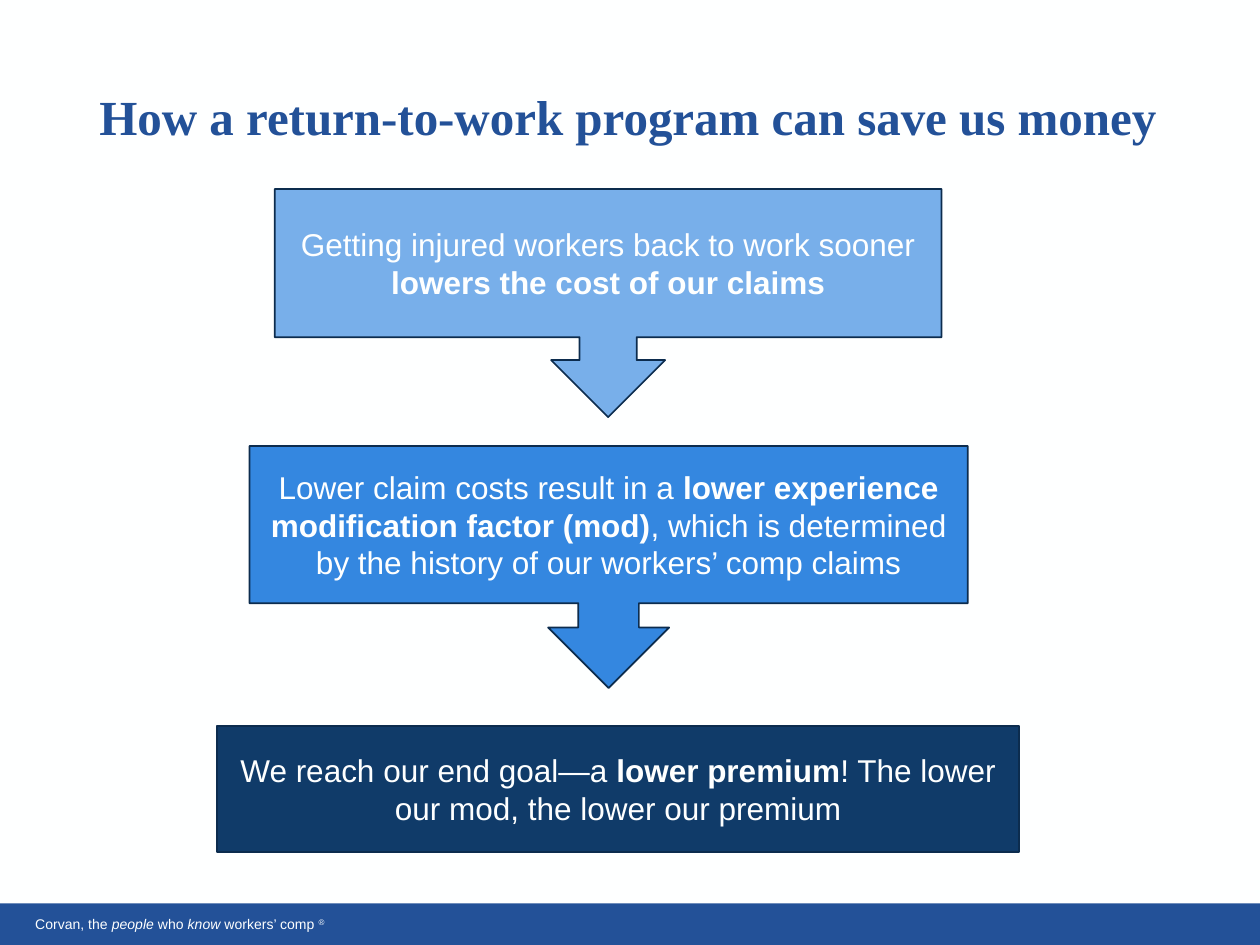
from pptx import Presentation
from pptx.dml.color import RGBColor
from pptx.enum.shapes import MSO_SHAPE
from pptx.enum.text import MSO_ANCHOR, PP_ALIGN
from pptx.util import Cm, Pt

RECTANGLE = MSO_SHAPE.RECTANGLE
ARROW_CALLOUT = MSO_SHAPE.DOWN_ARROW_CALLOUT
TOP, MIDDLE = MSO_ANCHOR.TOP, MSO_ANCHOR.MIDDLE
LEFT, CENTER = PP_ALIGN.LEFT, PP_ALIGN.CENTER

COLORS = {
    "paper": "FEFFFF",
    "brand": "235198",
    "outline": "0C2C4E",
    "light": "78AFEA",
    "medium": "3487E0",
    "dark": "103B69",
}

PAGE_WIDTH, PAGE_HEIGHT = 25.4, 19.05

# Each step: box (left, top, width, height), shape, colour, (text, style) spans
STEPS = [
    ((5.54, 3.81, 13.44, 4.6), ARROW_CALLOUT, "light", [
        ("Getting injured workers back to work sooner ", ""),
        ("lowers the cost of our claims", "bold"),
    ]),
    ((5.03, 8.99, 14.48, 4.88), ARROW_CALLOUT, "medium", [
        ("Lower claim costs result in a ", ""),
        ("lower experience modification factor (mod)", "bold"),
        (", which is determined by the history of our workers’ comp claims", ""),
    ]),
    ((4.37, 14.63, 16.18, 2.54), RECTANGLE, "dark", [
        ("We reach our end goal—a ", ""),
        ("lower premium", "bold"),
        ("! The lower our mod, the lower our premium", ""),
    ]),
]

FOOTER_SPANS = [
    ("Corvan, the ", ""),
    ("people", "italic"),
    (" who ", ""),
    ("know", "italic"),
    (" workers’ comp ", ""),
    ("®", "superscript"),
]


def color(name):
    return RGBColor.from_string(COLORS[name])


def write_text(shape, spans, *, size, font="Arial", ink="paper",
               align=LEFT, anchor=MIDDLE, spacing=1.0):
    """Fill a shape with one paragraph of (text, style) spans."""
    frame = shape.text_frame
    frame.word_wrap = True
    frame.vertical_anchor = anchor
    para = frame.paragraphs[0]
    para.alignment = align
    para.line_spacing = spacing
    for text, style in spans:
        span = para.add_run()
        span.text = text
        span.font.name = font
        span.font.size = Pt(size)
        span.font.color.rgb = color(ink)
        span.font.bold = style == "bold"
        span.font.italic = style == "italic"
        if style == "superscript":
            span._r.get_or_add_rPr().set("baseline", "30000")


def add_block(page, kind, box, fill, outline=None):
    block = page.shapes.add_shape(kind, *map(Cm, box))
    block.shadow.inherit = False
    block.fill.solid()
    block.fill.fore_color.rgb = color(fill)
    if outline:
        block.line.color.rgb = color(outline)
        block.line.width = Pt(1)
    else:
        block.line.fill.background()
    return block


def add_footer(page, box):
    left, top, width, height = box
    add_block(page, RECTANGLE, box, "brand")
    caption = page.shapes.add_textbox(
        Cm(left + 0.46), Cm(top + 0.13), Cm(8.81), Cm(height - 0.13))
    write_text(caption, FOOTER_SPANS, size=8, anchor=TOP)


def add_title(page, box):
    title = page.shapes.title
    title.left, title.top, title.width, title.height = map(Cm, box)
    write_text(title, [("How a return-to-work program can save us money", "bold")],
               size=28, font="Times New Roman", ink="brand", spacing=0.9)


def add_step(page, box, kind, fill, spans):
    step = add_block(page, kind, box, fill, outline="outline")
    write_text(step, spans, size=18, align=CENTER)


def main():
    deck = Presentation()
    deck.slide_width, deck.slide_height = Cm(PAGE_WIDTH), Cm(PAGE_HEIGHT)
    page = deck.slides.add_slide(deck.slide_layouts[5])  # title only
    page.background.fill.solid()
    page.background.fill.fore_color.rgb = color("paper")

    # Footer band and heading
    add_footer(page, (0, 18.21, PAGE_WIDTH, PAGE_HEIGHT - 18.21))
    add_title(page, (1.75, 0.58, 21.9, 3.68))

    # Chain of steps, top to bottom
    for step in STEPS:
        add_step(page, *step)

    deck.save("out.pptx")


if __name__ == "__main__":
    main()
